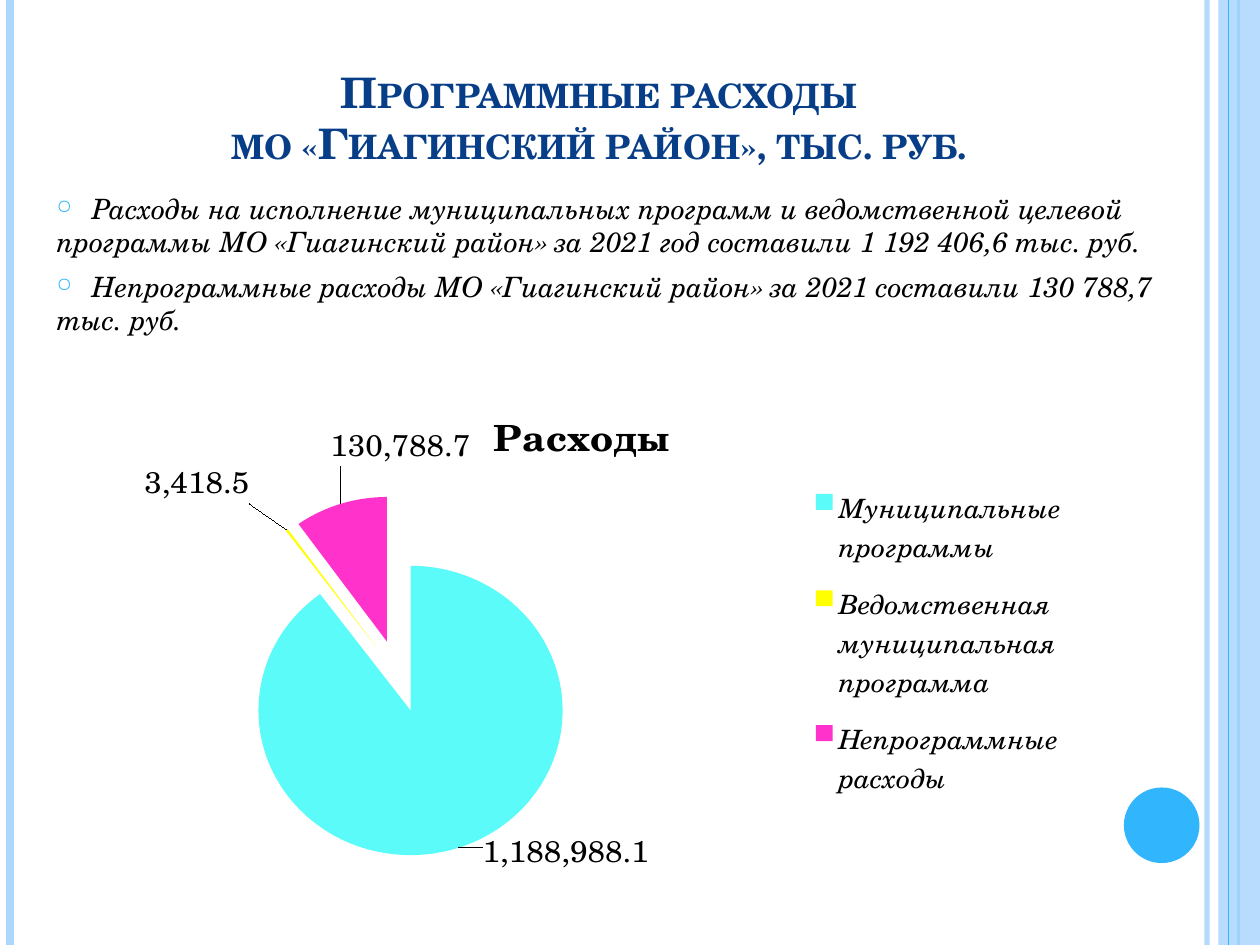
from lxml.etree import SubElement
from pptx import Presentation
from pptx.chart.data import CategoryChartData
from pptx.dml.color import RGBColor
from pptx.enum.chart import XL_CHART_TYPE, XL_LABEL_POSITION, XL_LEGEND_POSITION
from pptx.enum.shapes import MSO_CONNECTOR, MSO_SHAPE
from pptx.enum.text import MSO_ANCHOR, MSO_AUTO_SIZE, PP_ALIGN
from pptx.oxml import parse_xml
from pptx.oxml.ns import nsdecls, qn
from pptx.util import Inches, Pt

WIDTH, HEIGHT = 10, 7.5
FONT = "TeX Gyre Schola"
PALE_BLUE = RGBColor(0xAE, 0xD7, 0xFE)
BLUE = RGBColor(0x31, 0xB6, 0xFD)
NAVY = RGBColor(0x07, 0x3E, 0x87)
BLACK = RGBColor(0, 0, 0)
CYAN = RGBColor(0x5A, 0xFB, 0xF8)
YELLOW = RGBColor(0xFF, 0xFF, 0)
PINK = RGBColor(0xFF, 0x33, 0xCC)
NUMBER_FORMAT = "#,##0.0"

STRIPES = [(9.58, 3, PALE_BLUE, 93), (0.08, 4.5, PALE_BLUE, 100), (9.83, 1.5, BLUE, 100)]
TITLE_LINES = ["Программные расходы", "мо «Гиагинский район», тыс. руб."]
STATEMENTS = [
    "Расходы на исполнение муниципальных программ и ведомственной целевой "
    "программы МО «Гиагинский район» за 2021 год составили 1 192 406,6 тыс. руб.",
    "Непрограммные расходы МО «Гиагинский район» за 2021 составили 130 788,7 тыс. руб.",
]
EXPENSES = [
    ("Муниципальные программы", 1188988.1, CYAN, (0.02, -0.02)),
    ("Ведомственная муниципальная программа", 3418.5, YELLOW, (-0.03, -0.04)),
    ("Непрограммные расходы", 130788.7, PINK, (0.12, -0.06)),
]


def box(left, top, width, height):
    return Inches(left), Inches(top), Inches(width), Inches(height)


def style_font(font, size, color=BLACK, bold=False, italic=False):
    font.name = FONT
    font.size = Pt(size)
    font.color.rgb = color
    font.bold = bold
    font.italic = italic


def set_opacity(element, percent):
    if percent < 100:
        color = next(element.iter(qn("a:srgbClr")))
        SubElement(color, qn("a:alpha"), val=str(percent * 1000))


def add_stripe(slide, x, weight, color, opacity=100):
    stripe = slide.shapes.add_connector(
        MSO_CONNECTOR.STRAIGHT, Inches(x), 0, Inches(x), Inches(HEIGHT))
    stripe.line.color.rgb = color
    stripe.line.width = Pt(weight)
    properties = stripe._element.spPr
    set_opacity(properties, opacity)
    SubElement(properties, qn("a:effectLst"))


def add_plain_shape(slide, kind, place, color, opacity=100):
    shape = slide.shapes.add_shape(kind, *box(*place))
    shape.shadow.inherit = False
    shape.fill.solid()
    shape.fill.fore_color.rgb = color
    shape.line.fill.background()
    set_opacity(shape._element.spPr, opacity)


def set_title(slide):
    title = slide.shapes.title
    title.left, title.top, title.width, title.height = box(0.67, 0.13, 8.17, 1.25)
    frame = title.text_frame
    frame.auto_size = MSO_AUTO_SIZE.NONE
    frame.vertical_anchor = MSO_ANCHOR.BOTTOM
    paragraph = frame.paragraphs[0]
    paragraph.alignment = PP_ALIGN.CENTER
    for index, line in enumerate(TITLE_LINES):
        if index:
            paragraph.add_line_break()
        run = paragraph.add_run()
        run.text = line
        style_font(run.font, 24, NAVY, bold=True)
        run.font._element.set("cap", "small")


def add_bullet(paragraph):
    properties = paragraph._p.get_or_add_pPr()
    properties.set("marL", "0")
    properties.set("indent", "0")
    color = SubElement(properties, qn("a:buClr"))
    SubElement(color, qn("a:srgbClr"), val=str(BLUE))
    SubElement(properties, qn("a:buSzPct"), val="70000")
    SubElement(properties, qn("a:buChar"), char="○")
    tabs = SubElement(properties, qn("a:tabLst"))
    SubElement(tabs, qn("a:tab"), pos=str(Inches(0.28)), algn="l")


def add_statements(slide):
    frame = slide.shapes.add_textbox(*box(0.35, 1.47, 8.98, 1.65)).text_frame
    frame.word_wrap = True
    for index, statement in enumerate(STATEMENTS):
        paragraph = frame.add_paragraph() if index else frame.paragraphs[0]
        add_bullet(paragraph)
        if index:
            paragraph.space_before = Pt(6)
        run = paragraph.add_run()
        run.text = "\t" + statement
        style_font(run.font, 16, italic=True)


def layout_xml(x, y, size=None, edge=True, inner=False):
    parts = ['<c:layoutTarget val="inner"/>'] if inner else []
    if edge:
        parts += ['<c:xMode val="edge"/>', '<c:yMode val="edge"/>']
    parts += [f'<c:x val="{x}"/>', f'<c:y val="{y}"/>']
    if size:
        parts += [f'<c:w val="{size[0]}"/>', f'<c:h val="{size[1]}"/>']
    return parse_xml(f'<c:layout {nsdecls("c")}><c:manualLayout>'
                     f'{"".join(parts)}</c:manualLayout></c:layout>')


def place_part(part, layout, after=None):
    for old in part.findall(qn("c:layout")):
        part.remove(old)
    if after is None:
        part.insert(0, layout)
    else:
        part.find(qn(after)).addnext(layout)


def format_slice(point, color, offset):
    point.format.fill.solid()
    point.format.fill.fore_color.rgb = color
    point.format.line.fill.background()
    label = point.data_label
    style_font(label.font, 18)
    label.position = XL_LABEL_POSITION.OUTSIDE_END
    element = label._get_or_add_dLbl()
    number = parse_xml(f'<c:numFmt {nsdecls("c")} formatCode="{NUMBER_FORMAT}" sourceLinked="0"/>')
    element.find(qn("c:idx")).addnext(number)
    place_part(element, layout_xml(*offset, edge=False), "c:idx")


def format_slices(plot):
    plot.vary_by_categories = True
    series = plot.series[0]
    explosion = parse_xml(f'<c:explosion {nsdecls("c")} val="25"/>')
    series._element.find(qn("c:tx")).addnext(explosion)
    labels = series.data_labels
    labels.show_value = True
    labels.number_format = NUMBER_FORMAT
    labels.number_format_is_linked = False
    labels.position = XL_LABEL_POSITION.OUTSIDE_END
    style_font(labels.font, 18)
    for index, (_, _, color, offset) in enumerate(EXPENSES):
        format_slice(series.points[index], color, offset)


def add_expense_pie(slide):
    data = CategoryChartData(number_format=NUMBER_FORMAT)
    data.categories = [name for name, *_ in EXPENSES]
    data.add_series("Расходы", [amount for _, amount, *_ in EXPENSES])
    chart = slide.shapes.add_chart(
        XL_CHART_TYPE.PIE, *box(0.28, 2.88, 8.74, 4.25), data).chart
    style_font(chart.font, 18)

    chart.has_title = True
    heading = chart.chart_title.text_frame.paragraphs[0].add_run()
    heading.text = "Расходы"
    style_font(heading.font, 21.6, bold=True)
    place_part(chart.chart_title._element, layout_xml(0.41, 0.07), "c:tx")

    chart.has_legend = True
    chart.legend.position = XL_LEGEND_POSITION.RIGHT
    chart.legend.include_in_layout = False
    style_font(chart.legend.font, 16, italic=True)
    place_part(chart.legend._element, layout_xml(0.69, 0.21, (0.26, 0.68)), "c:legendPos")

    plot_area = chart._chartSpace.chart.plotArea
    place_part(plot_area, layout_xml(0.06, 0.26, (0.54, 0.71), inner=True))
    format_slices(chart.plots[0])


def main():
    presentation = Presentation()
    presentation.slide_width = Inches(WIDTH)
    presentation.slide_height = Inches(HEIGHT)
    slide = presentation.slides.add_slide(presentation.slide_layouts[5])
    for stripe in STRIPES:
        add_stripe(slide, *stripe)
    add_plain_shape(slide, MSO_SHAPE.RECTANGLE, (9.67, 0, 0.33, HEIGHT), PALE_BLUE, 87)
    add_stripe(slide, 9.75, 0.75, BLUE)
    add_plain_shape(slide, MSO_SHAPE.OVAL, (8.92, 6.25, 0.6, 0.6), BLUE)
    set_title(slide)
    add_statements(slide)
    add_expense_pie(slide)
    presentation.save("out.pptx")


if __name__ == "__main__":
    main()
